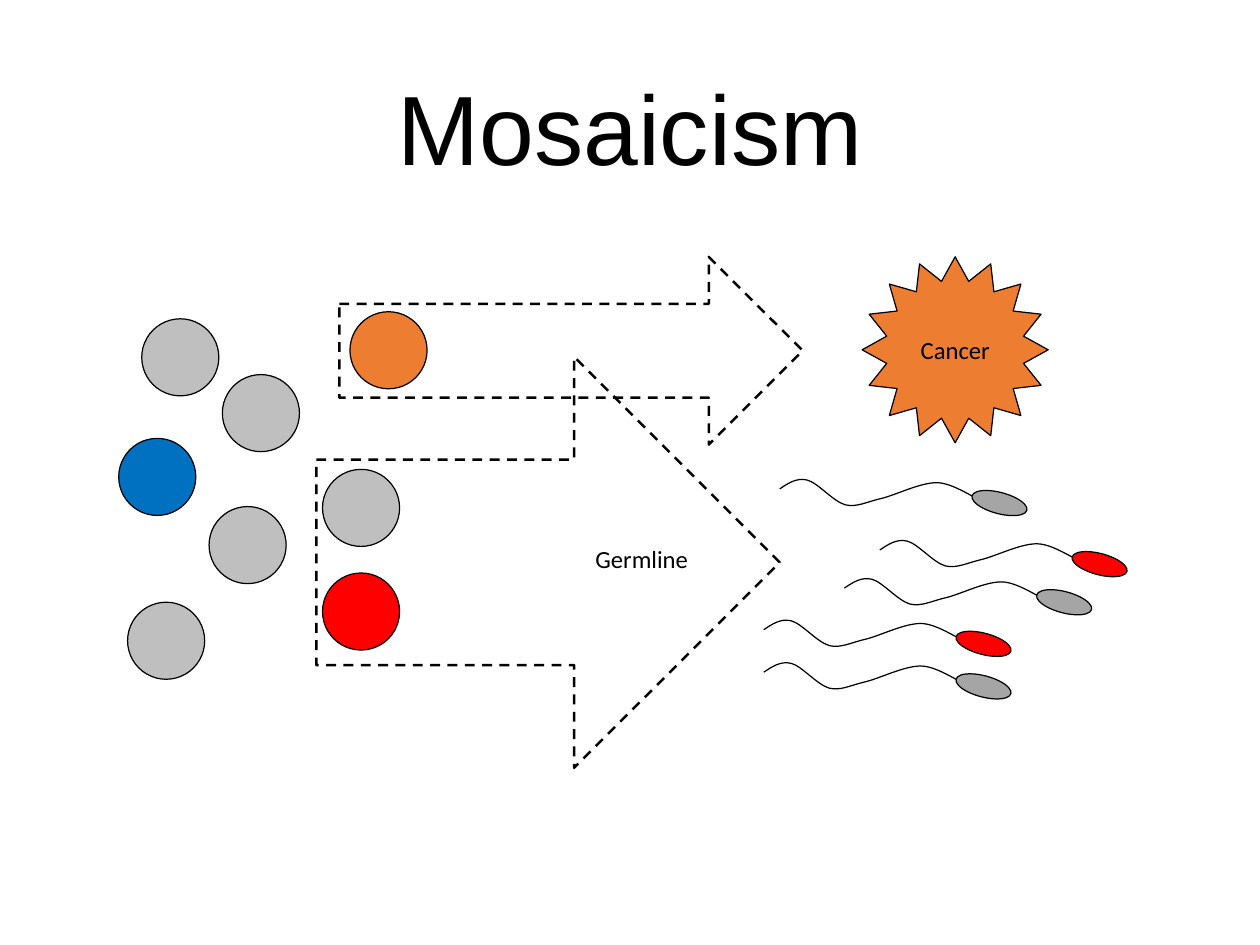
from lxml import etree
from pptx import Presentation
from pptx.dml.color import RGBColor
from pptx.enum.dml import MSO_LINE
from pptx.enum.shapes import MSO_SHAPE
from pptx.enum.text import MSO_ANCHOR, PP_ALIGN
from pptx.oxml.ns import qn
from pptx.util import Pt

PX = 9144  # EMU per px, 100 px to the inch
OVAL, ARROW, STAR = MSO_SHAPE.OVAL, MSO_SHAPE.RIGHT_ARROW, MSO_SHAPE.STAR_16_POINT
DASH = MSO_LINE.DASH
MIDDLE, TOP = MSO_ANCHOR.MIDDLE, MSO_ANCHOR.TOP
CENTER, LEFT = PP_ALIGN.CENTER, PP_ALIGN.LEFT

BLACK = RGBColor(0x00, 0x00, 0x00)
LIGHT_GRAY = RGBColor(0xBF, 0xBF, 0xBF)
GRAY = RGBColor(0xA5, 0xA5, 0xA5)
BLUE = RGBColor(0x00, 0x70, 0xC0)
RED = RGBColor(0xFF, 0x00, 0x00)
ORANGE = RGBColor(0xED, 0x7D, 0x31)

CELL_SIZE = 87
TAIL_WIDTH, TAIL_HEIGHT, TIP_DROP = 230, 29, 10


def paint(shape, color=None, line_width=1):
    """Give a shape a black outline and a fill, or no fill without a color."""
    shape.shadow.inherit = False
    if color is None:
        shape.fill.background()
    else:
        shape.fill.solid()
        shape.fill.fore_color.rgb = color
    shape.line.color.rgb = BLACK
    shape.line.width = Pt(line_width)


def add_label(text, box, size, font, inset, align, anchor, wrap):
    frame = slide.shapes.add_textbox(*(v * PX for v in box)).text_frame
    frame.margin_left = frame.margin_right = inset * PX
    frame.margin_top = frame.margin_bottom = inset * PX
    frame.vertical_anchor = anchor
    frame.word_wrap = wrap
    frame.text = text
    paragraph = frame.paragraphs[0]
    paragraph.alignment = align
    run_font = paragraph.runs[0].font
    run_font.size = Pt(size)
    run_font.name = font
    run_font.color.rgb = BLACK


prs = Presentation()
prs.slide_width, prs.slide_height = 1422 * PX, 1067 * PX
slide = prs.slides.add_slide(prs.slide_layouts[6])

add_label("Mosaicism", (104, 24, 1214, 236), 80, "Arial", 6, CENTER, MIDDLE, True)

# Body cells
cells = [
    (160, 360, LIGHT_GRAY),
    (251, 423, LIGHT_GRAY),
    (364, 530, LIGHT_GRAY),
    (236, 572, LIGHT_GRAY),
    (144, 680, LIGHT_GRAY),
    (134, 495, BLUE),
    (364, 647, RED),
    (395, 352, ORANGE),
]
for left, top, color in cells:
    cell = slide.shapes.add_shape(OVAL, left * PX, top * PX, CELL_SIZE * PX, CELL_SIZE * PX)
    paint(cell, color)

# Germline arrow, then cancer arrow
for box in [(357, 403, 523, 464), (383, 290, 523, 212)]:
    arrow = slide.shapes.add_shape(ARROW, *(v * PX for v in box))
    paint(arrow, line_width=2)
    arrow.line.dash_style = DASH

tumor = slide.shapes.add_shape(STAR, 973 * PX, 290 * PX, 210 * PX, 210 * PX)
paint(tumor, ORANGE)

add_label("Germline", (667, 609, 116, 43), 20, "Calibri", 5, LEFT, TOP, False)

# Tail as cubic curves from its tip: two control points and an end point each
tail_curves = [
    [(9, -6), (19, -13), (31, -10)],
    [(43, -7), (60, 14), (74, 18)],
    [(87, 21), (97, 15), (114, 11)],
    [(131, 7), (158, -7), (177, -7)],
    [(195, -7), (218, 10), (226, 12)],
    [(234, 15), (228, 13), (223, 10)],
]
tail_steps = [("a:moveTo", [(0, 0)])]
tail_steps += [("a:cubicBezTo", curve) for curve in tail_curves]

# Sperm cells, placed by the tip of the tail
sperm_cells = [
    (880, 552, GRAY),
    (953, 664, GRAY),
    (862, 759, GRAY),
    (993, 621, RED),
    (862, 711, RED),
]
for tip_x, tip_y, color in sperm_cells:
    sperm = slide.shapes.add_group_shape()
    tail_top = tip_y - TIP_DROP
    builder = sperm.shapes.build_freeform(tip_x, tail_top, scale=PX)
    builder.add_line_segments(
        [(tip_x + TAIL_WIDTH, tail_top + TAIL_HEIGHT)], close=False)
    tail = builder.convert_to_shape()
    paint(tail)

    # Fill the tail's frame with the curves
    outline = next(tail._element.iter(qn("a:path")))
    outline.set("w", str(TAIL_WIDTH))
    outline.set("h", str(TAIL_HEIGHT))
    for segment in list(outline):
        outline.remove(segment)
    for tag, points in tail_steps:
        step = etree.SubElement(outline, qn(tag))
        for x, y in points:
            etree.SubElement(step, qn("a:pt"), x=str(x), y=str(y + TIP_DROP))

    head = sperm.shapes.add_shape(
        OVAL, (tip_x + 216) * PX, (tip_y + 4) * PX, 64 * PX, 24 * PX)
    head.rotation = 14.8
    paint(head, color)

add_label("Cancer", (1034, 373, 89, 43), 20, "Calibri", 5, LEFT, TOP, False)

prs.save("out.pptx")
